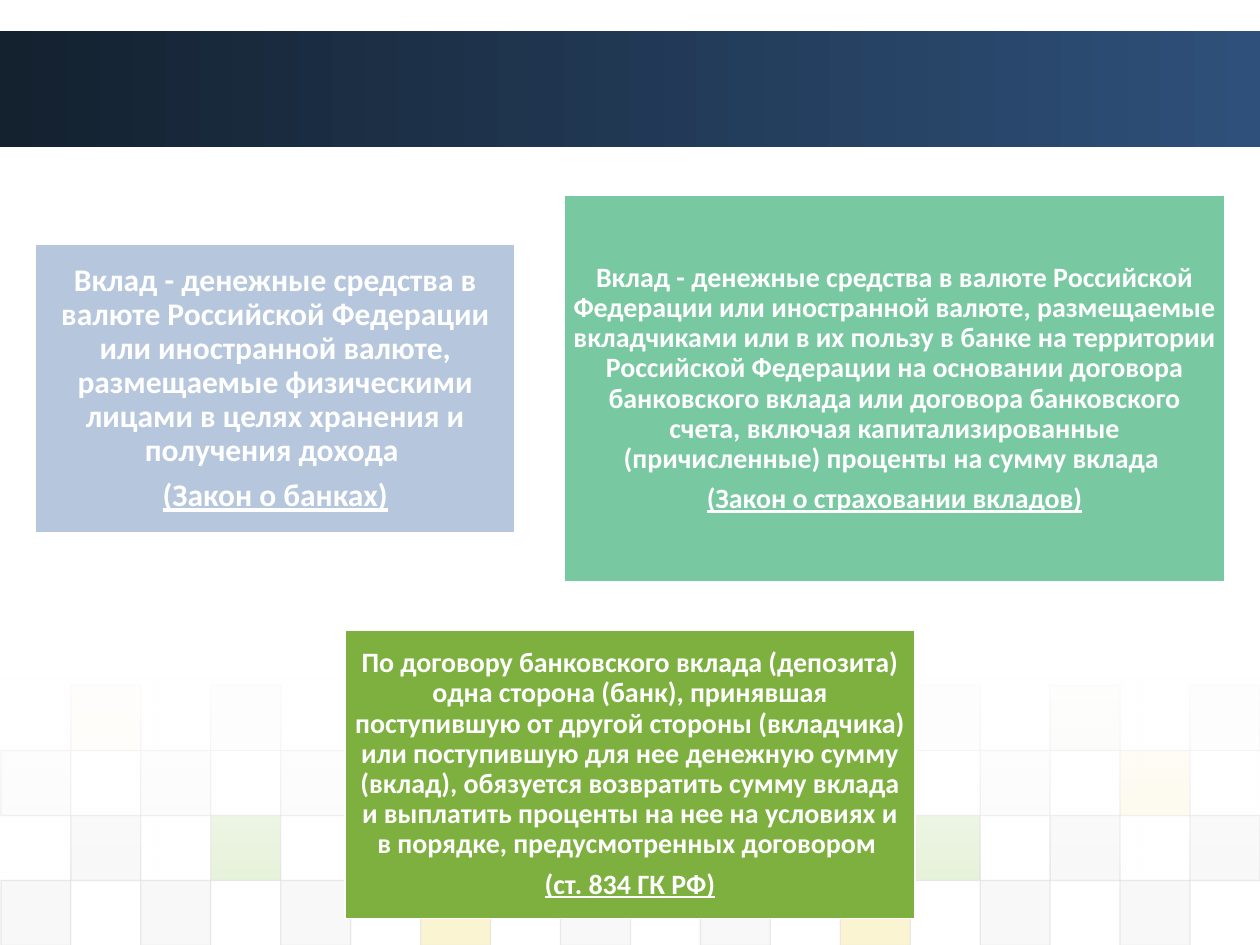
"""Build a slide with three legal definitions of a bank deposit."""
from lxml import etree
from pptx import Presentation
from pptx.dml.color import RGBColor
from pptx.enum.shapes import MSO_SHAPE
from pptx.enum.text import MSO_ANCHOR, PP_ALIGN
from pptx.oxml.ns import qn
from pptx.util import Cm, Pt

RECTANGLE = MSO_SHAPE.RECTANGLE
CENTER = PP_ALIGN.CENTER
MIDDLE = MSO_ANCHOR.MIDDLE

COLORS = {
    "white": "FFFFFF",
    "band_start": "14212F",
    "band_end": "2E507A",
    "grey": "DDDDDD",
    "pale": "EAEAEA",
    "green": "8AC246",
    "yellow": "EFC821",
    "bank_law": "B5C6DD",
    "insurance_law": "78C8A1",
    "civil_code": "7DB03F",
}
SLIDE_WIDTH, SLIDE_HEIGHT = 25.4, 19.05
MARGIN = 0.71
UPPER_MIDDLE = 7.84
TILE_LEFT, TILE_TOP = 0.02, 13.82
TILE_WIDTH, TILE_HEIGHT = 1.41, 1.31
TILE_ROWS = [
    (5, {1: "yellow", 3: "pale", 13: "pale", 15: "green", 17: "pale"}),
    (10, {0: "grey", 2: "grey", 4: "grey", 14: "grey", 16: "yellow"}),
    (20, {1: "grey", 3: "green", 13: "green", 15: "grey", 17: "grey"}),
    (20, {0: "grey", 2: "grey", 4: "grey", 6: "yellow", 8: "grey",
          10: "grey", 12: "yellow", 14: "grey", 16: "grey"}),
]
BANK_LAW = (
    "Вклад - денежные средства в валюте Российской Федерации или иностранной "
    "валюте, размещаемые физическими лицами в целях хранения и получения дохода "
)
INSURANCE_LAW = (
    "Вклад - денежные средства в валюте Российской Федерации или иностранной "
    "валюте, размещаемые вкладчиками или в их пользу в банке на территории "
    "Российской Федерации на основании договора банковского вклада или договора "
    "банковского счета, включая капитализированные (причисленные) проценты на "
    "сумму вклада "
)
CIVIL_CODE = (
    "По договору банковского вклада (депозита) одна сторона (банк), принявшая "
    "поступившую от другой стороны (вкладчика) или поступившую для нее денежную "
    "сумму (вклад), обязуется возвратить сумму вклада и выплатить проценты на нее "
    "на условиях и в порядке, предусмотренных договором "
)


def color(name):
    """Return the named colour."""
    return RGBColor.from_string(COLORS[name])


def add_rectangle(slide, left, top, width, height, fill=None, line=None, weight=1):
    """Add a rectangle without a shadow, measured in centimetres."""
    rectangle = slide.shapes.add_shape(
        RECTANGLE, Cm(left), Cm(top), Cm(width), Cm(height))
    rectangle.shadow.inherit = False
    if fill:
        rectangle.fill.solid()
        rectangle.fill.fore_color.rgb = color(fill)
    if line:
        rectangle.line.color.rgb = color(line)
        rectangle.line.width = Pt(weight)
    else:
        rectangle.line.fill.background()
    return rectangle


def set_opacity(shape, *percents):
    """Set the opacity of the shape's colours in their order."""
    for tint, percent in zip(shape._element.iter(qn("a:srgbClr")), percents):
        etree.SubElement(tint, qn("a:alpha")).set("val", str(percent * 1000))


def add_gradient(slide, left, top, width, height, start, end, angle):
    """Add a rectangle with a gradient of two colours."""
    area = add_rectangle(slide, left, top, width, height)
    area.fill.gradient()
    area.fill.gradient_angle = angle
    for stop, name, position in zip(area.fill.gradient_stops, (start, end), (0, 1)):
        stop.color.rgb = color(name)
        stop.position = position
    return area


def add_tiles(slide):
    """Add the checkered tiles at the foot of the slide."""
    for row, (opacity, tiles) in enumerate(TILE_ROWS):
        for column, fill in tiles.items():
            tile = add_rectangle(
                slide, TILE_LEFT + column * TILE_WIDTH, TILE_TOP + row * TILE_HEIGHT,
                TILE_WIDTH, TILE_HEIGHT, fill, line="grey", weight=0.75)
            set_opacity(tile, opacity, 60)


def write(paragraph, text, size, underline=False):
    """Write centred bold white text into the paragraph."""
    paragraph.alignment = CENTER
    paragraph.line_spacing = 0.9
    paragraph.space_after = Pt(round(size * 0.35, 1))
    run = paragraph.add_run()
    run.text = text
    run.font.name = "Calibri"
    run.font.size = Pt(size)
    run.font.bold = True
    run.font.underline = underline
    run.font.color.rgb = color("white")


def add_definition(slide, left, top, width, height, fill, text, source, size):
    """Add a filled box with a definition and its underlined source."""
    box = add_rectangle(slide, left, top, width, height, fill, line="white")
    frame = box.text_frame
    frame.word_wrap = True
    frame.vertical_anchor = MIDDLE
    frame.margin_left = frame.margin_right = Cm(0.17)
    frame.margin_top = frame.margin_bottom = Cm(0.17)
    write(frame.paragraphs[0], text, size)
    write(frame.add_paragraph(), source, size, underline=True)


def main():
    """Build and save the slide."""
    deck = Presentation()
    deck.slide_width, deck.slide_height = Cm(SLIDE_WIDTH), Cm(SLIDE_HEIGHT)
    slide = deck.slides.add_slide(deck.slide_layouts[6])

    add_gradient(slide, 0, 0.63, SLIDE_WIDTH, 2.34, "band_start", "band_end", 0)
    add_tiles(slide)
    haze = add_gradient(slide, 0, 13.64, SLIDE_WIDTH, 4.11, "white", "white", 270)
    set_opacity(haze, 90, 0)

    small_height, large_height = 5.82, 7.8
    insurance_width, code_width = 13.31, 11.48
    add_definition(
        slide, MARGIN, UPPER_MIDDLE - small_height / 2, 9.68, small_height,
        "bank_law", BANK_LAW, "(Закон о банках)", 18)
    add_definition(
        slide, SLIDE_WIDTH - MARGIN - insurance_width,
        UPPER_MIDDLE - large_height / 2, insurance_width, large_height,
        "insurance_law", INSURANCE_LAW, "(Закон о страховании вкладов)", 16)
    add_definition(
        slide, (SLIDE_WIDTH - code_width) / 2, 12.7, code_width, small_height,
        "civil_code", CIVIL_CODE, "(ст. 834 ГК РФ)", 16)
    deck.save("out.pptx")


if __name__ == "__main__":
    main()
